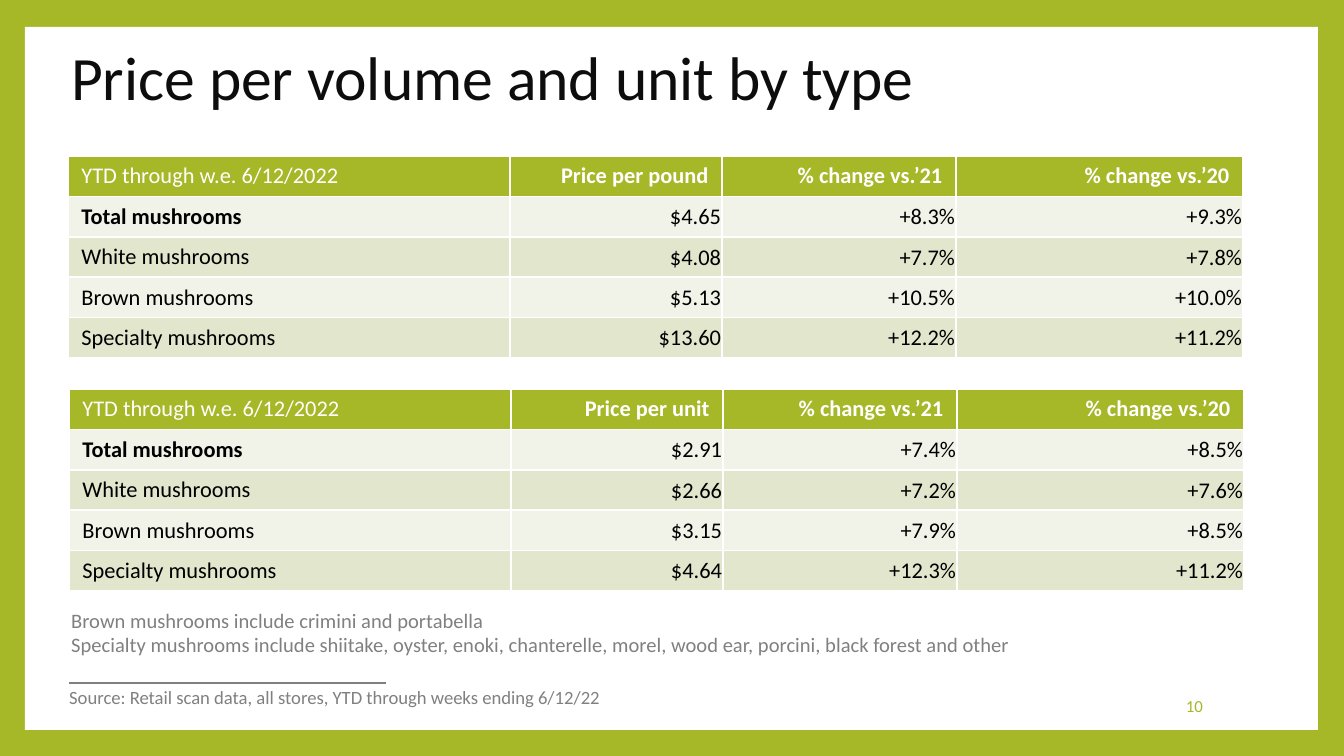
import dataclasses

import lxml.etree
import pptx
import pptx.dml.color
import pptx.enum.shapes
import pptx.enum.text
import pptx.oxml.ns
import pptx.shapes.connector
import pptx.slide
import pptx.table
import pptx.text.text
import pptx.util

EMU_PER_PX = 914400 / 134.4
FONT = "Calibri"
GREEN = pptx.dml.color.RGBColor(0xA6, 0xB7, 0x27)
LIGHT_BAND = pptx.dml.color.RGBColor(0xF1, 0xF3, 0xE8)
DARK_BAND = pptx.dml.color.RGBColor(0xE1, 0xE6, 0xCD)
WHITE = pptx.dml.color.RGBColor(0xFF, 0xFF, 0xFF)
BLACK = pptx.dml.color.RGBColor(0x00, 0x00, 0x00)
TITLE_INK = pptx.dml.color.RGBColor(0x0D, 0x0D, 0x0D)
GRAY = pptx.dml.color.RGBColor(0x80, 0x80, 0x80)
LEFT = pptx.enum.text.PP_ALIGN.LEFT
RIGHT = pptx.enum.text.PP_ALIGN.RIGHT
TOP = pptx.enum.text.MSO_ANCHOR.TOP
MIDDLE = pptx.enum.text.MSO_ANCHOR.MIDDLE
COLUMN_WIDTHS = (442, 212, 234, 287)
ROW_HEIGHT = 40


@dataclasses.dataclass(frozen=True)
class TextBlock:
    box: tuple[int, int, int, int]
    lines: tuple[str, ...]
    size: int
    color: pptx.dml.color.RGBColor
    alignment: pptx.enum.text.PP_ALIGN = LEFT
    anchor: pptx.enum.text.MSO_ANCHOR = TOP
    line_spacing: float = 1.0


@dataclasses.dataclass(frozen=True)
class PriceTable:
    left: int
    top: int
    price_heading: str
    rows: tuple[tuple[str, str, str, str], ...]


TEXT_BLOCKS = (
    TextBlock((58, 28, 1146, 106), ("Price per volume and unit by type",),
              33, TITLE_INK, anchor=MIDDLE, line_spacing=0.9),
    TextBlock((1028, 686, 188, 40), ("10",), 9, GREEN, RIGHT, MIDDLE),
    TextBlock((56, 679, 589, 36),
              ("Source: Retail scan data, all stores, YTD through weeks ending 6/12/22",),
              10, GRAY),
    TextBlock((58, 601, 989, 63),
              ("Brown mushrooms include crimini and portabella",
               "Specialty mushrooms include shiitake, oyster, enoki, chanterelle, morel, "
               "wood ear, porcini, black forest and other"),
              11, GRAY),
)

PRICE_TABLES = (
    PriceTable(68, 156, "Price per pound", (
        ("Total mushrooms", "$4.65", "+8.3%", "+9.3%"),
        ("White mushrooms", "$4.08", "+7.7%", "+7.8%"),
        ("Brown mushrooms", "$5.13", "+10.5%", "+10.0%"),
        ("Specialty mushrooms", "$13.60", "+12.2%", "+11.2%"),
    )),
    PriceTable(69, 389, "Price per unit", (
        ("Total mushrooms", "$2.91", "+7.4%", "+8.5%"),
        ("White mushrooms", "$2.66", "+7.2%", "+7.6%"),
        ("Brown mushrooms", "$3.15", "+7.9%", "+8.5%"),
        ("Specialty mushrooms", "$4.64", "+12.3%", "+11.2%"),
    )),
)


def px(length: int) -> pptx.util.Emu:
    return pptx.util.Emu(round(length * EMU_PER_PX))


def add_text(paragraph: pptx.text.text._Paragraph, text: str, size: int,
             color: pptx.dml.color.RGBColor, bold: bool = False) -> None:
    run = paragraph.add_run()
    run.text = text
    run.font.name = FONT
    run.font.size = pptx.util.Pt(size)
    run.font.bold = bold
    run.font.color.rgb = color


def draw_text_block(slide: pptx.slide.Slide, block: TextBlock) -> None:
    frame = slide.shapes.add_textbox(*map(px, block.box)).text_frame
    frame.word_wrap = True
    frame.vertical_anchor = block.anchor
    for index, line in enumerate(block.lines):
        paragraph = frame.add_paragraph() if index else frame.paragraphs[0]
        paragraph.alignment = block.alignment
        paragraph.line_spacing = block.line_spacing
        add_text(paragraph, line, block.size, block.color)


def draw_panel(slide: pptx.slide.Slide) -> None:
    panel = slide.shapes.add_shape(
        pptx.enum.shapes.MSO_SHAPE.RECTANGLE, px(25), px(27), px(1293), px(703))
    panel.shadow.inherit = False
    panel.fill.solid()
    panel.fill.fore_color.rgb = WHITE
    panel.line.fill.background()


def draw_source_rule(slide: pptx.slide.Slide) -> None:
    rule = slide.shapes.add_connector(
        pptx.enum.shapes.MSO_CONNECTOR.STRAIGHT, px(69), px(683), px(386), px(683))
    rule.line.color.rgb = GRAY
    rule.line.width = pptx.util.Pt(0.79)
    lxml.etree.SubElement(rule._element.spPr, pptx.oxml.ns.qn("a:effectLst"))


def add_borders(cell: pptx.table._Cell) -> None:
    properties = cell._tc.get_or_add_tcPr()
    for side in ("lnL", "lnR", "lnT", "lnB"):
        border = lxml.etree.SubElement(
            properties, pptx.oxml.ns.qn(f"a:{side}"), w=str(pptx.util.Pt(1)))
        fill = lxml.etree.SubElement(border, pptx.oxml.ns.qn("a:solidFill"))
        lxml.etree.SubElement(fill, pptx.oxml.ns.qn("a:srgbClr"), val=str(WHITE))


def draw_cell(cell: pptx.table._Cell, text: str, row: int, column: int) -> None:
    is_header = row == 0
    is_value = row > 0 and column > 0
    add_borders(cell)
    cell.fill.solid()
    cell.fill.fore_color.rgb = (
        GREEN if is_header else LIGHT_BAND if row % 2 else DARK_BAND)
    cell.vertical_anchor = TOP if is_header else MIDDLE
    if is_value:
        cell.margin_left = cell.margin_right = cell.margin_top = px(1)
        cell.margin_bottom = 0
    paragraph = cell.text_frame.paragraphs[0]
    paragraph.alignment = RIGHT if column else LEFT
    bold = column > 0 if is_header else row == 1 and column == 0
    add_text(paragraph, text, 12, WHITE if is_header else BLACK, bold)


def draw_price_table(slide: pptx.slide.Slide, price_table: PriceTable) -> None:
    header = ("YTD through w.e. 6/12/2022", price_table.price_heading,
              "% change vs.’21", "% change vs.’20")
    rows = (header, *price_table.rows)
    table = slide.shapes.add_table(
        len(rows), len(header), px(price_table.left), px(price_table.top),
        px(sum(COLUMN_WIDTHS)), px(ROW_HEIGHT * len(rows))).table
    for column, width in zip(table.columns, COLUMN_WIDTHS):
        column.width = px(width)
    for row_index, row in enumerate(rows):
        table.rows[row_index].height = px(ROW_HEIGHT)
        for column_index, text in enumerate(row):
            draw_cell(table.cell(row_index, column_index), text, row_index, column_index)


def main() -> None:
    presentation = pptx.Presentation()
    presentation.slide_width = px(1344)
    presentation.slide_height = px(756)
    slide = presentation.slides.add_slide(presentation.slide_layouts[6])
    slide.background.fill.solid()
    slide.background.fill.fore_color.rgb = GREEN
    draw_panel(slide)
    for block in TEXT_BLOCKS:
        draw_text_block(slide, block)
    draw_source_rule(slide)
    for price_table in PRICE_TABLES:
        draw_price_table(slide, price_table)
    presentation.save("out.pptx")


if __name__ == "__main__":
    main()
